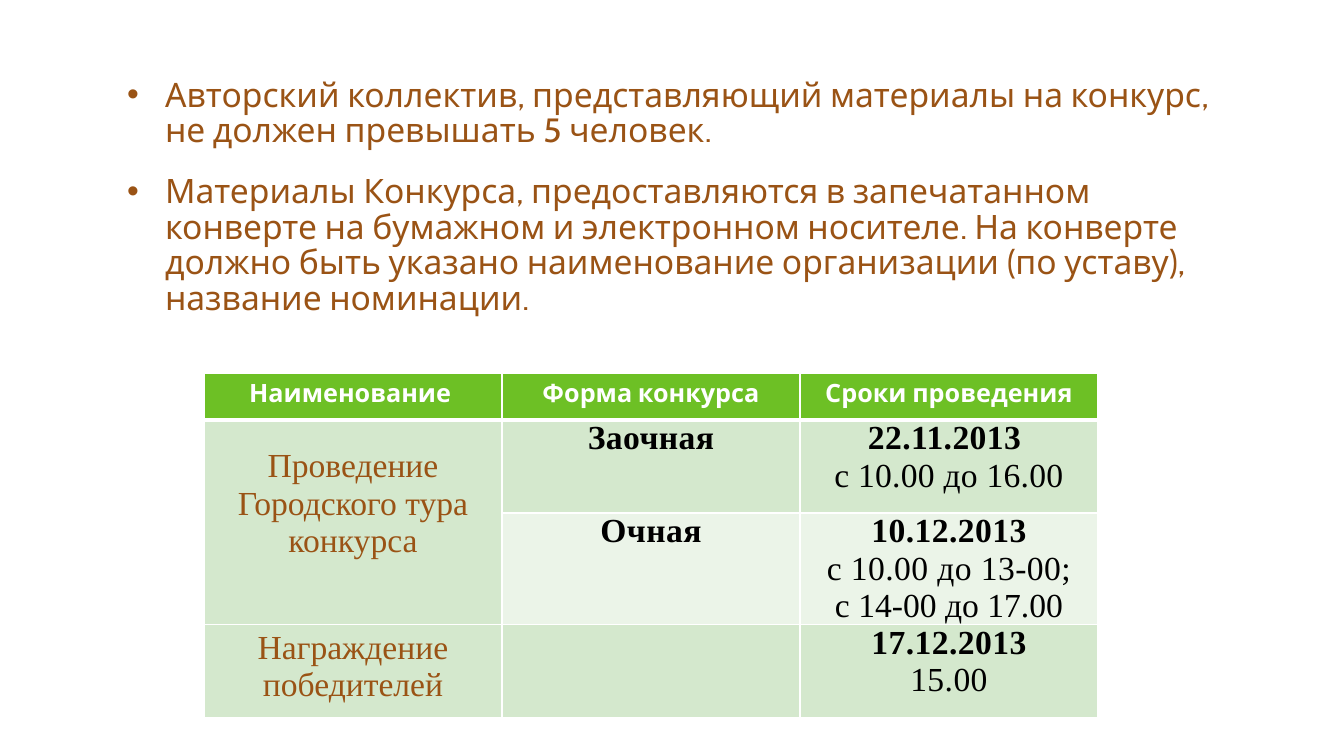
from dataclasses import dataclass

from lxml import etree
from pptx import Presentation
from pptx import util as u
from pptx.dml.color import RGBColor
from pptx.enum import text
from pptx.oxml.ns import qn

PX = 12192000 / 1344  # EMU in one px


def px(length):
    return u.Emu(round(length * PX))


@dataclass(frozen=True)
class Theme:
    body_font: str = "Cabin"
    table_font: str = "Times New Roman"
    body_size: int = 24
    header_size: int = 18
    brown: str = "9A5315"
    black: str = "000000"
    white: str = "FFFFFF"
    green: str = "6DC025"
    band_dark: str = "D4E8CD"
    band_light: str = "EBF4E8"


@dataclass(frozen=True)
class Line:
    """One paragraph of a table cell; tracking is in hundredths of a point."""
    words: str
    color: str
    bold: bool = False
    tracking: int = 0


class SlideBuilder:
    def __init__(self, slide, theme):
        self.slide = slide
        self.theme = theme

    def set_font(self, font, name, size, color, bold=False):
        font.name, font.size, font.bold = name, u.Pt(size), bold
        font.color.rgb = RGBColor.from_string(color)

    def bullets(self, left, top, width, height, items):
        box = self.slide.placeholders[1]
        box.left, box.top, box.width, box.height = map(px, (left, top, width, height))
        frame = box.text_frame
        frame.word_wrap = True
        frame.auto_size = text.MSO_AUTO_SIZE.NONE
        frame.vertical_anchor = text.MSO_ANCHOR.TOP
        for index, item in enumerate(items):
            para = frame.paragraphs[0] if index == 0 else frame.add_paragraph()
            para.text = item
            props = para._p.get_or_add_pPr()
            props.set("marL", str(px(38)))
            props.set("indent", str(px(-38)))
            etree.SubElement(props, qn("a:buFont")).set("typeface", "Arial")
            etree.SubElement(props, qn("a:buChar")).set("char", "•")
            para.line_spacing = 0.88
            para.space_before = u.Pt(18 if index else 0)
            self.set_font(para.font, self.theme.body_font, self.theme.body_size,
                          self.theme.brown)

    def table(self, left, top, column_width, row_heights, column_count):
        frame = self.slide.shapes.add_table(
            len(row_heights), column_count, px(left), px(top),
            px(column_width * column_count), px(sum(row_heights)))
        table = frame.table
        for column in table.columns:
            column.width = px(column_width)
        for row, height in zip(table.rows, row_heights):
            row.height = px(height)
        return table

    def borders(self, cell, bottom):
        props = cell._tc.get_or_add_tcPr()
        for side, points in (("L", 1), ("R", 1), ("T", 1), ("B", bottom)):
            edge = etree.SubElement(props, qn(f"a:ln{side}"), w=str(u.Pt(points)))
            fill = etree.SubElement(edge, qn("a:solidFill"))
            etree.SubElement(fill, qn("a:srgbClr")).set("val", self.theme.white)

    def cell(self, cell, lines, fill, font, size, insets=(10, 5), bottom=1):
        """Fill one cell; insets are the side and the top margin."""
        self.borders(cell, bottom)
        cell.fill.solid()
        cell.fill.fore_color.rgb = RGBColor.from_string(fill)
        side, top = insets
        cell.margin_left = cell.margin_right = px(side)
        cell.margin_top, cell.margin_bottom = px(top), px(min(top, 5))
        for index, line in enumerate(lines):
            frame = cell.text_frame
            para = frame.paragraphs[0] if index == 0 else frame.add_paragraph()
            para.alignment = text.PP_ALIGN.CENTER
            span = para.add_run()
            span.text = line.words
            self.set_font(para.font, font, size, line.color, line.bold)
            # Table styles can override paragraph defaults, so runs carry the font.
            self.set_font(span.font, font, size, line.color, line.bold)
            if line.tracking:
                span._r.get_or_add_rPr().set("spc", str(line.tracking))


RULES = [
    "Авторский коллектив, представляющий материалы на конкурс, "
    "не должен превышать 5 человек.",
    "Материалы Конкурса, предоставляются в запечатанном конверте на бумажном "
    "и электронном носителе. На конверте должно быть указано наименование "
    "организации (по уставу), название номинации.",
]
HEADERS = ["Наименование ", "Форма конкурса", "Сроки проведения"]


def main():
    deck = Presentation()
    deck.slide_width, deck.slide_height = px(1344), px(756)
    page = deck.slides.add_slide(deck.slide_layouts[1])
    title = page.shapes.title._element
    title.getparent().remove(title)

    theme = Theme()
    builder = SlideBuilder(page, theme)
    builder.bullets(117, 74, 1109, 326, RULES)

    def stage(words):
        return Line(words, theme.brown)

    def strong(words):
        return Line(words, theme.black, True, 30)

    def hours(words, tracking):
        return Line(words, theme.black, False, tracking)

    schedule = [
        [[stage("Проведение Городского тура конкурса")],
         [strong("Заочная")],
         [strong("22.11.2013 "), hours("с 10.00 до 16.00", 20)]],
        [[],
         [strong("Очная")],
         [strong("10.12.2013"), hours("с 10.00 до 13-00;", 30),
          hours("с 14-00 до 17.00", 0)]],
        [[stage("Награждение победителей")],
         [],
         [strong("17.12.2013"), hours("15.00", 30)]],
    ]
    stage_insets = [(12, 28), (12, 0), (10, 5)]
    bands = [theme.band_dark, theme.band_light, theme.band_dark]

    table = builder.table(204, 373, 298, [47, 93, 93, 93], len(HEADERS))
    table.cell(1, 0).merge(table.cell(2, 0))
    for column, header in enumerate(HEADERS):
        builder.cell(table.cell(0, column), [Line(header, theme.white, True)],
                     theme.green, theme.body_font, theme.header_size, bottom=3)
    for row, (contents, band) in enumerate(zip(schedule, bands)):
        for column, lines in enumerate(contents):
            insets = (12, 0) if column else stage_insets[row]
            builder.cell(table.cell(row + 1, column), lines, band,
                         theme.table_font, theme.body_size, insets)

    deck.save("out.pptx")


if __name__ == "__main__":
    main()
